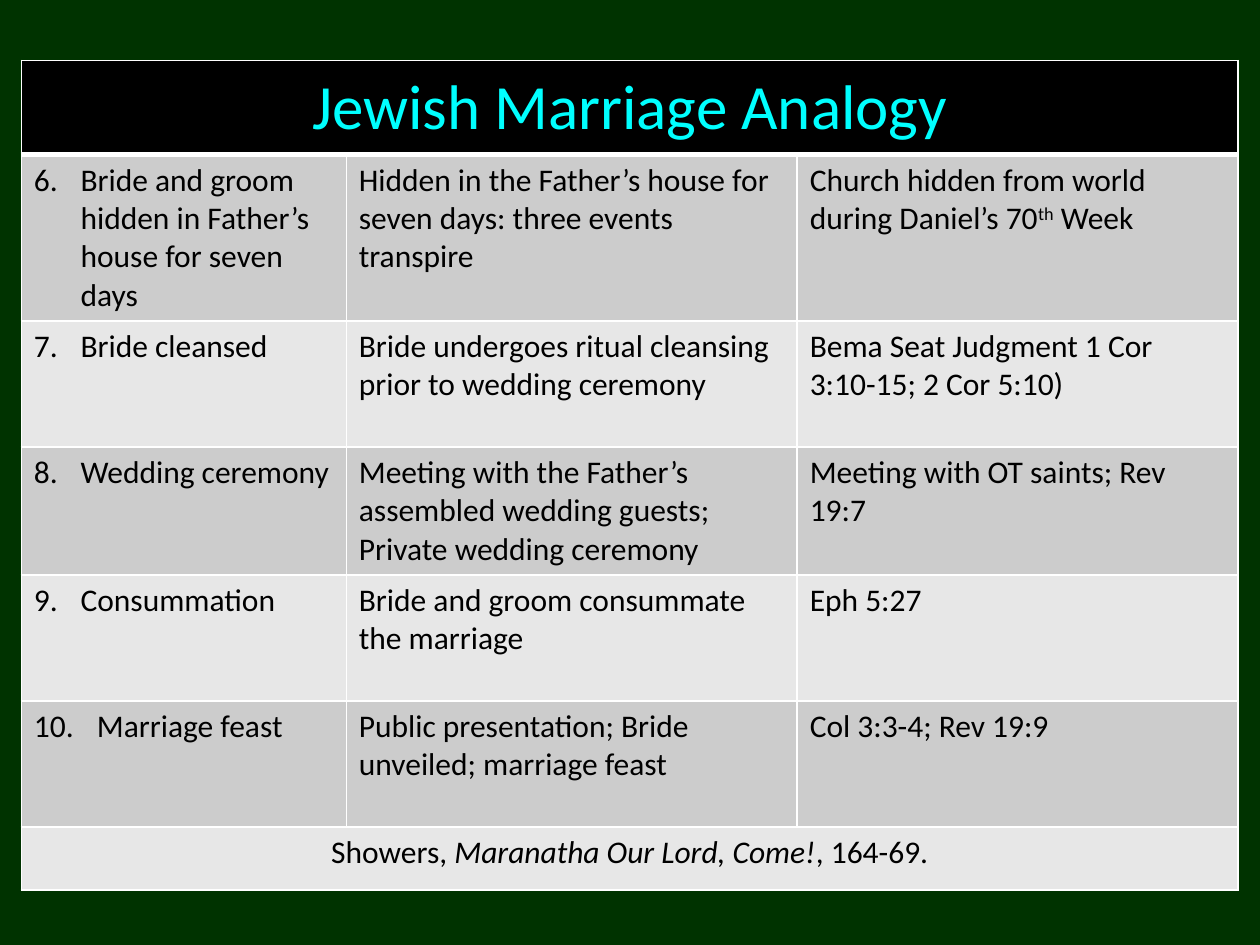
from dataclasses import dataclass

from lxml import etree
from pptx import Presentation
from pptx import util as u
from pptx.dml.color import RGBColor
from pptx.enum import text
from pptx.oxml import ns

BACKGROUND = RGBColor(0x00, 0x33, 0x00)
BLACK = RGBColor(0x00, 0x00, 0x00)
WHITE = RGBColor(0xFF, 0xFF, 0xFF)
CYAN = RGBColor(0x00, 0xFF, 0xFF)
DARK_BAND = RGBColor(0xCC, 0xCC, 0xCC)
LIGHT_BAND = RGBColor(0xE7, 0xE7, 0xE7)

FONT = "Calibri"
COLUMN_WIDTHS = (u.Cm(6.55), u.Cm(9.09), u.Cm(8.89))
TITLE_HEIGHT, STEP_HEIGHT, SOURCE_HEIGHT = u.Cm(1.9), u.Cm(2.54), u.Cm(1.27)
FIRST_NUMBER = 6


@dataclass(frozen=True)
class Span:
    text: str
    italic: bool = False
    superscript: bool = False


@dataclass(frozen=True)
class Step:
    name: str
    custom: str
    meaning: tuple[Span, ...]
    indent: u.Length = u.Cm(0.94)


STEPS = (
    Step("Bride and groom hidden in Father’s house for seven days",
         "Hidden in the Father’s house for seven days: three events transpire",
         (Span("Church hidden from world during Daniel’s 70"),
          Span("th", superscript=True), Span(" Week"))),
    Step("Bride cleansed",
         "Bride undergoes ritual cleansing prior to wedding ceremony",
         (Span("Bema Seat Judgment 1 Cor 3:10-15; 2 Cor 5:10)"),)),
    Step("Wedding ceremony",
         "Meeting with the Father’s assembled wedding guests; Private wedding ceremony",
         (Span("Meeting with OT saints; Rev 19:7"),)),
    Step("Consummation",
         "Bride and groom consummate the marriage",
         (Span("Eph 5:27"),)),
    Step("Marriage feast",
         "Public presentation; Bride unveiled; marriage feast",
         (Span("Col 3:3-4; Rev 19:9"),), indent=u.Cm(1.27)),
)
SOURCE = (Span("Showers, "), Span("Maranatha Our Lord, Come!", italic=True),
          Span(", 164-69."))


def set_borders(cell, bottom: float = 1) -> None:
    properties = cell._tc.get_or_add_tcPr()
    widths = {"a:lnL": 1, "a:lnR": 1, "a:lnT": 1, "a:lnB": bottom}
    for position, (tag, width) in enumerate(widths.items()):
        line = etree.Element(ns.qn(tag), w=str(u.Pt(width)))
        fill = etree.SubElement(line, ns.qn("a:solidFill"))
        etree.SubElement(fill, ns.qn("a:srgbClr"), val=str(WHITE))
        properties.insert(position, line)


def write(cell, spans: tuple[Span, ...], *, size: float = 18,
          color: RGBColor = BLACK, align=text.PP_ALIGN.LEFT,
          before: float = 12, after: float = 12):
    paragraph = cell.text_frame.paragraphs[0]
    paragraph.alignment = align
    paragraph.space_before = u.Pt(before)
    paragraph.space_after = u.Pt(after)
    for span in spans:
        run = paragraph.add_run()
        run.text = span.text
        run.font.name = FONT
        run.font.size = u.Pt(size)
        run.font.color.rgb = color
        run.font.italic = span.italic
        if span.superscript:
            run.font._element.set("baseline", "30000")
    return paragraph


def number(paragraph, value: int, indent: u.Length) -> None:
    properties = paragraph._p.get_or_add_pPr()
    properties.set("marL", str(indent))
    properties.set("indent", str(-indent))
    etree.SubElement(properties, ns.qn("a:buAutoNum"),
                     type="arabicPeriod", startAt=str(value))


def paint_row(table, row: int, color: RGBColor, bottom: float = 1) -> None:
    for cell in table.rows[row].cells:
        set_borders(cell, bottom)
        cell.fill.solid()
        cell.fill.fore_color.rgb = color


def merge_row(table, row: int):
    first = table.cell(row, 0)
    first.merge(table.cell(row, len(COLUMN_WIDTHS) - 1))
    return first


def write_step(table, row: int, step: Step) -> None:
    name, custom, meaning = table.rows[row].cells
    paragraph = write(name, (Span(step.name),))
    number(paragraph, FIRST_NUMBER + row - 1, step.indent)
    write(custom, (Span(step.custom),))
    write(meaning, step.meaning)


def add_analogy_table(slide) -> None:
    heights = (TITLE_HEIGHT, *[STEP_HEIGHT] * len(STEPS), SOURCE_HEIGHT)
    frame = slide.shapes.add_table(
        len(heights), len(COLUMN_WIDTHS), u.Cm(0.43), u.Cm(1.22),
        sum(COLUMN_WIDTHS), sum(heights))
    table = frame.table
    table.first_row = False
    table.horz_banding = False
    for column, width in zip(table.columns, COLUMN_WIDTHS):
        column.width = width
    for row, height in zip(table.rows, heights):
        row.height = height
    frame.height = u.Cm(16.64)

    title = merge_row(table, 0)
    title.vertical_anchor = text.MSO_ANCHOR.MIDDLE
    write(title, (Span("Jewish Marriage Analogy"),), size=36, color=CYAN,
          align=text.PP_ALIGN.CENTER, before=7.2, after=0)
    paint_row(table, 0, BLACK, bottom=3)

    for row, step in enumerate(STEPS, start=1):
        write_step(table, row, step)

    source_row = len(heights) - 1
    write(merge_row(table, source_row), SOURCE, align=text.PP_ALIGN.CENTER)
    for row in range(1, len(heights)):
        paint_row(table, row, DARK_BAND if row % 2 else LIGHT_BAND)


def main() -> None:
    presentation = Presentation()
    presentation.slide_width = u.Cm(25.4)
    presentation.slide_height = u.Cm(19.05)
    slide = presentation.slides.add_slide(presentation.slide_layouts[6])
    slide.background.fill.solid()
    slide.background.fill.fore_color.rgb = BACKGROUND
    add_analogy_table(slide)
    presentation.save("out.pptx")


if __name__ == "__main__":
    main()
